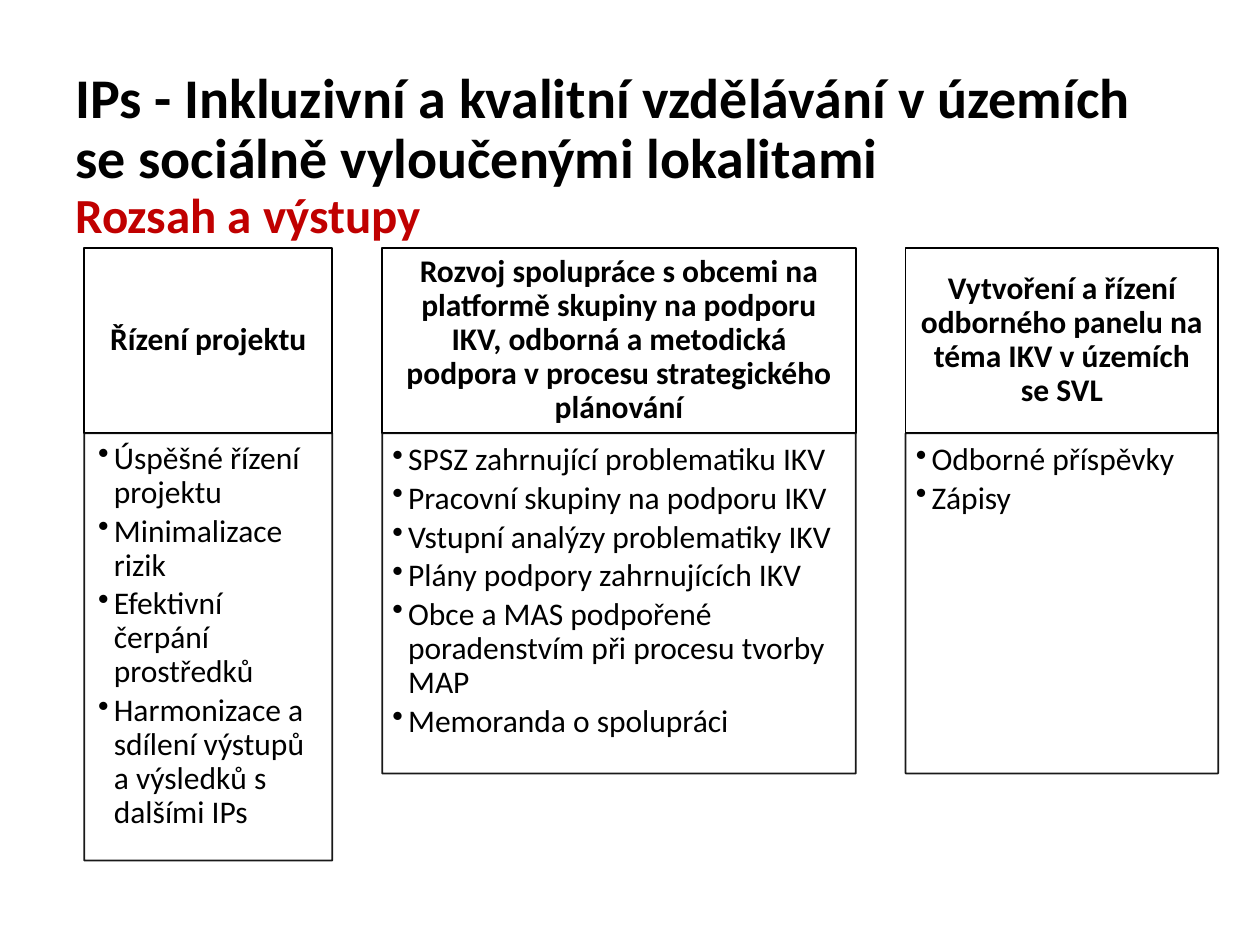
"""Build a slide listing the scope and outputs of a project in three columns."""
from dataclasses import dataclass
from typing import Any

import lxml.etree
import pptx
import pptx.dml.color
import pptx.enum.shapes
import pptx.enum.text
import pptx.oxml.ns
import pptx.util

Pt = pptx.util.Pt
Align = pptx.enum.text.PP_ALIGN
Anchor = pptx.enum.text.MSO_ANCHOR


@dataclass(frozen=True)
class Theme:
    font: str = "Calibri"
    ink: str = "000000"
    accent: str = "C00000"
    paper: str = "FFFFFF"
    title_size: float = 32
    subtitle_size: float = 28
    text_size: float = 18
    line_spacing: float = 0.9
    border: float = 1
    opacity: int = 90


@dataclass(frozen=True)
class Frame:
    left: float
    top: float
    width: float
    height: float

    def lengths(self) -> list[int]:
        return [Pt(value) for value in (self.left, self.top, self.width, self.height)]


@dataclass(frozen=True)
class Column:
    heading: str
    items: list[str]
    width: float
    body_height: float
    separate_text: bool = False


THEME = Theme()
TITLE_FRAME = Frame(36, 44.6, 648, 90)
COLUMNS_LEFT, COLUMNS_TOP, COLUMN_GAP, HEADING_HEIGHT = 48.2, 141.8, 28.4, 105.8
TEXT_BOX_MARGINS = (7.2, 3.6, 7.2, 3.6)
HEADING_MARGINS = (7.2, 4.3, 7.2, 4.3)
BODY_MARGINS = (5.8, 5.8, 7.2, 7.9)
BULLET_INDENT = 9

COLUMNS = [
    Column("Řízení projektu", [
        "Úspěšné řízení projektu",
        "Minimalizace rizik",
        "Efektivní čerpání prostředků",
        "Harmonizace a sdílení výstupů a výsledků s dalšími IPs",
    ], 141.8, 244.1, separate_text=True),
    Column("Rozvoj spolupráce s obcemi na platformě skupiny na podporu IKV, "
           "odborná a metodická podpora v procesu strategického plánování", [
        "SPSZ zahrnující problematiku IKV",
        "Pracovní skupiny na podporu IKV",
        "Vstupní analýzy problematiky IKV",
        "Plány podpory zahrnujících IKV",
        "Obce a MAS podpořené poradenstvím při procesu tvorby MAP",
        "Memoranda o spolupráci",
    ], 270.7, 194.4),
    Column("Vytvoření a řízení odborného panelu na téma IKV v územích se SVL", [
        "Odborné příspěvky",
        "Zápisy",
    ], 178.6, 194.4),
]


def rgb(color: str) -> pptx.dml.color.RGBColor:
    return pptx.dml.color.RGBColor.from_string(color)


def add_run(para: Any, text: str, size: float, color: str, bold: bool) -> None:
    span = para.add_run()
    span.text = text
    span.font.name = THEME.font
    span.font.size = Pt(size)
    span.font.bold = bold
    span.font.color.rgb = rgb(color)


def add_bullet(para: Any) -> None:
    properties = para._p.get_or_add_pPr()
    properties.set("marL", str(Pt(BULLET_INDENT)))
    properties.set("indent", str(-Pt(BULLET_INDENT)))
    lxml.etree.SubElement(properties, pptx.oxml.ns.qn("a:buChar"), char="•")


def write_text(box: Any, texts: list[str], *, margins: tuple[float, ...],
               size: float = THEME.text_size, color: str = THEME.ink,
               bold: bool = False, bullets: bool = False, align: Any = Align.LEFT,
               anchor: Any = Anchor.TOP, space_after: float = 0) -> Any:
    """Write one paragraph per text and return the last one."""
    frame = box.text_frame
    frame.word_wrap = True
    frame.vertical_anchor = anchor
    (frame.margin_left, frame.margin_top,
     frame.margin_right, frame.margin_bottom) = [Pt(margin) for margin in margins]
    for index, text in enumerate(texts):
        para = frame.add_paragraph() if index else frame.paragraphs[0]
        if bullets:
            add_bullet(para)
        para.alignment = align
        para.line_spacing = THEME.line_spacing
        para.space_after = Pt(space_after)
        add_run(para, text, size, color, bold)
    return para


def add_panel(page: Any, frame: Frame, opacity: int = 100) -> Any:
    panel = page.shapes.add_shape(
        pptx.enum.shapes.MSO_SHAPE.RECTANGLE, *frame.lengths())
    panel.shadow.inherit = False
    panel.fill.solid()
    panel.fill.fore_color.rgb = rgb(THEME.paper)
    panel.line.color.rgb = rgb(THEME.ink)
    panel.line.width = Pt(THEME.border)
    if opacity < 100:
        for color in panel._element.spPr.iter(pptx.oxml.ns.qn("a:srgbClr")):
            lxml.etree.SubElement(
                color, pptx.oxml.ns.qn("a:alpha"), val=str(opacity * 1000))
    return panel


def add_title(page: Any) -> None:
    box = page.shapes.add_textbox(*TITLE_FRAME.lengths())
    para = write_text(
        box,
        ["IPs - Inkluzivní a kvalitní vzdělávání v územích se sociálně vyloučenými lokalitami"],
        margins=TEXT_BOX_MARGINS, size=THEME.title_size, bold=True, anchor=Anchor.MIDDLE)
    para.add_line_break()
    add_run(para, "Rozsah a výstupy", THEME.subtitle_size, THEME.accent, True)


def add_column(page: Any, column: Column, left: float) -> None:
    heading = add_panel(page, Frame(left, COLUMNS_TOP, column.width, HEADING_HEIGHT))
    write_text(heading, [column.heading], margins=HEADING_MARGINS, bold=True,
               align=Align.CENTER, anchor=Anchor.MIDDLE)
    body_frame = Frame(left, COLUMNS_TOP + HEADING_HEIGHT, column.width, column.body_height)
    body, margins = add_panel(page, body_frame, THEME.opacity), BODY_MARGINS
    if column.separate_text:
        text_frame = Frame(left + 0.8, body_frame.top + 1.5, column.width - 0.7, 233.3)
        body, margins = page.shapes.add_textbox(*text_frame.lengths()), TEXT_BOX_MARGINS
    write_text(body, column.items, margins=margins, bullets=True, space_after=2.7)


def main() -> None:
    deck = pptx.Presentation()
    deck.slide_width, deck.slide_height = Pt(720), Pt(540)
    page = deck.slides.add_slide(deck.slide_layouts[6])
    add_title(page)
    left = COLUMNS_LEFT
    for column in COLUMNS:
        add_column(page, column, left)
        left += column.width + COLUMN_GAP
    deck.save("out.pptx")


if __name__ == "__main__":
    main()
